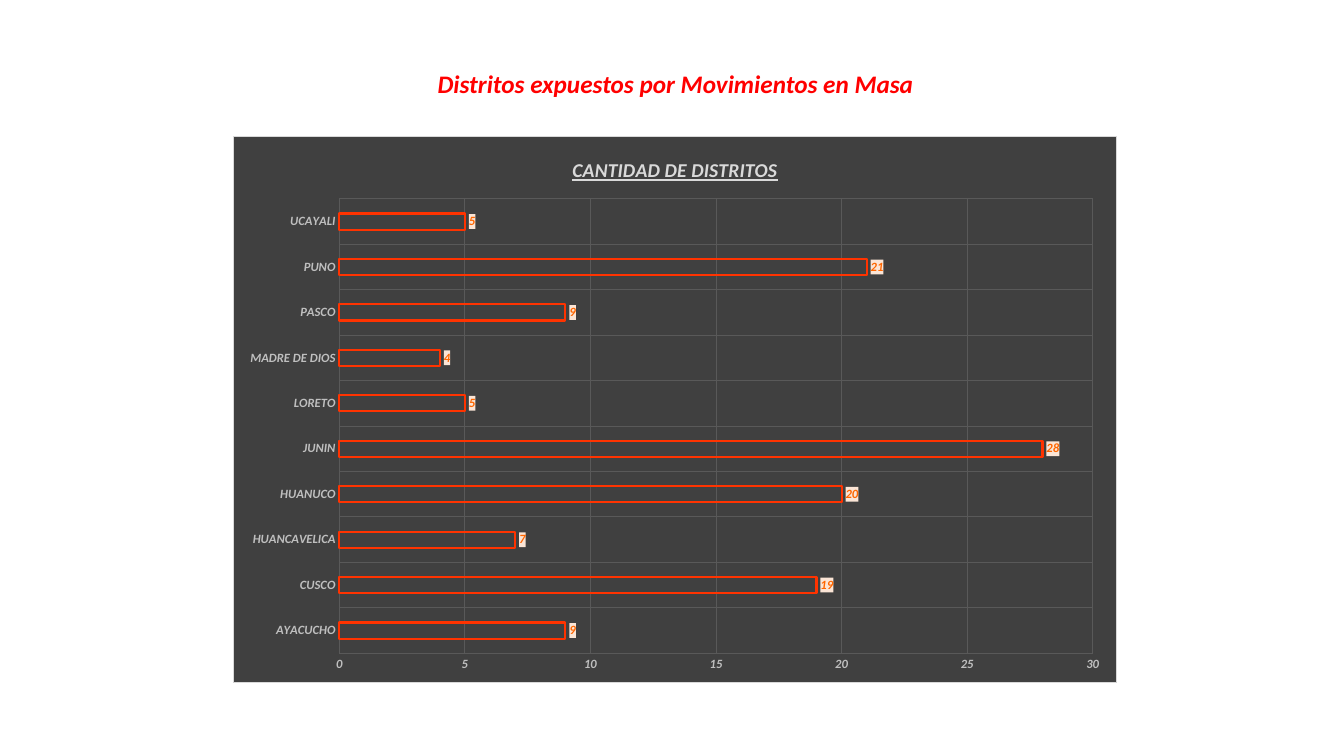
from dataclasses import dataclass

from pptx import Presentation
from pptx.chart.data import CategoryChartData
from pptx.dml.color import RGBColor
from pptx.enum.chart import XL_CHART_TYPE, XL_LABEL_POSITION, XL_TICK_MARK
from pptx.enum.text import MSO_ANCHOR, PP_ALIGN
from pptx.oxml import parse_xml
from pptx.oxml.ns import nsdecls, qn
from pptx.util import Inches, Pt


@dataclass(frozen=True)
class Theme:
    font: str = "Calibri"
    heading: str = "FF0000"
    panel: str = "404040"
    border: str = "D9D9D9"
    chart_title: str = "D9D9D9"
    axis_text: str = "BFBFBF"
    grid: str = "595959"
    bar: str = "FF3300"
    label: str = "FF6600"
    label_fill: str = "FBE5D6"
    heading_size: int = 18
    title_size: int = 14
    base_size: int = 10
    small_size: int = 9


THEME = Theme()
DISTRICTS = {
    "AYACUCHO": 9, "CUSCO": 19, "HUANCAVELICA": 7, "HUANUCO": 20, "JUNIN": 28,
    "LORETO": 5, "MADRE DE DIOS": 4, "PASCO": 9, "PUNO": 21, "UCAYALI": 5,
}


def style_font(font, size, color):
    font.name = THEME.font
    font.size = Pt(size)
    font.bold = font.italic = True
    font.color.rgb = RGBColor.from_string(color)


def set_line(line, color, width):
    line.color.rgb = RGBColor.from_string(color)
    line.width = Pt(width)


def area_format(fill, border=None):
    """Chart-part formatting: a solid fill with an optional border."""
    solid = '<a:solidFill><a:srgbClr val="{}"/></a:solidFill>'
    line = f'<a:ln w="9525">{solid.format(border)}</a:ln>' if border else ""
    return parse_xml(f'<c:spPr {nsdecls("c", "a")}>{solid.format(fill)}{line}</c:spPr>')


def add_heading(slide, left, top, width, height):
    tf = slide.shapes.add_textbox(
        Inches(left), Inches(top), Inches(width), Inches(height)).text_frame
    tf.word_wrap = False
    tf.vertical_anchor = MSO_ANCHOR.MIDDLE
    p = tf.paragraphs[0]
    p.alignment = PP_ALIGN.CENTER
    r = p.add_run()
    r.text = "Distritos expuestos por Movimientos en Masa"
    style_font(r.font, THEME.heading_size, THEME.heading)


def style_axis(axis):
    axis.major_tick_mark = axis.minor_tick_mark = XL_TICK_MARK.NONE
    axis.has_major_gridlines = True
    set_line(axis.major_gridlines.format.line, THEME.grid, 0.75)
    axis.format.line.fill.background()
    style_font(axis.tick_labels.font, THEME.small_size, THEME.axis_text)


def place_plot(chart, x, y, w, h):
    """Fix the inner plot area, in fractions of the chart."""
    plot_area = chart.element.find(".//" + qn("c:plotArea"))
    for old in plot_area.findall(qn("c:layout")):
        plot_area.remove(old)
    sizes = "".join(f'<c:{k} val="{v}"/>' for k, v in
                    (("x", x), ("y", y), ("w", w), ("h", h)))
    plot_area.insert(0, parse_xml(
        f'<c:layout {nsdecls("c")}><c:manualLayout><c:layoutTarget val="inner"/>'
        f'<c:xMode val="edge"/><c:yMode val="edge"/>{sizes}'
        '</c:manualLayout></c:layout>'))


def add_district_chart(slide, left, top, width, height):
    data = CategoryChartData(number_format="#,##0")
    data.categories = list(DISTRICTS)
    data.add_series("Series 1", list(DISTRICTS.values()))
    chart = slide.shapes.add_chart(
        XL_CHART_TYPE.BAR_CLUSTERED, Inches(left), Inches(top),
        Inches(width), Inches(height), data).chart
    chart.has_legend = False
    chart.font.name = THEME.font
    chart.font.size = Pt(THEME.base_size)
    chart.element.find(qn("c:txPr")).addprevious(
        area_format(THEME.panel, THEME.border))

    # Title
    chart.has_title = True
    r = chart.chart_title.text_frame.paragraphs[0].add_run()
    r.text = "CANTIDAD DE DISTRITOS"
    style_font(r.font, THEME.title_size, THEME.chart_title)
    r.font.underline = True
    chart.chart_title.include_in_layout = False

    # Axes
    for axis in (chart.category_axis, chart.value_axis):
        style_axis(axis)
    chart.value_axis.minimum_scale = 0
    chart.value_axis.maximum_scale = 30
    chart.value_axis.major_unit = 5
    place_plot(chart, 0.12, 0.114, 0.853, 0.832)

    # Outlined bars
    plot = chart.plots[0]
    plot.gap_width = 182
    plot.overlap = -50
    plot.vary_by_categories = False
    series = plot.series[0]
    series.format.fill.background()
    set_line(series.format.line, THEME.bar, 1.5)

    # Value labels
    labels = series.data_labels
    labels.show_value = True
    labels.position = XL_LABEL_POSITION.OUTSIDE_END
    labels.number_format = "#,##0"
    labels.number_format_is_linked = False
    style_font(labels.font, THEME.small_size, THEME.label)
    series.format.line  # bar outline stays separate from the label fill
    series_labels = chart.element.find(".//" + qn("c:ser") + "/" + qn("c:dLbls"))
    series_labels.find(qn("c:txPr")).addprevious(area_format(THEME.label_fill))


def main():
    prs = Presentation()
    prs.slide_width, prs.slide_height = Inches(13.33), Inches(7.5)
    slide = prs.slides.add_slide(prs.slide_layouts[6])
    add_heading(slide, 4.21, 0.63, 4.98, 0.4)
    add_district_chart(slide, 2.31, 1.35, 8.77, 5.43)
    prs.save("out.pptx")


if __name__ == "__main__":
    main()
